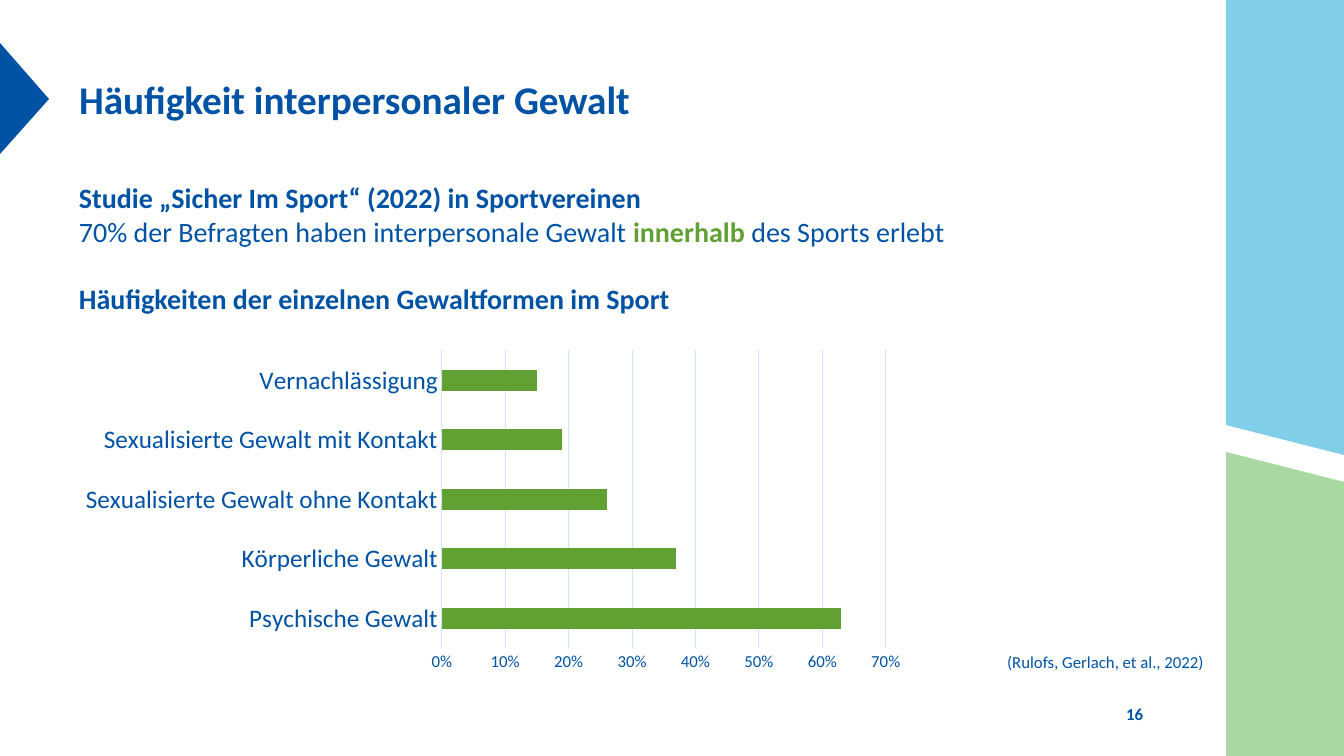
from lxml import etree
from pptx import Presentation
from pptx.chart.data import CategoryChartData
from pptx.dml.color import RGBColor
from pptx.enum.chart import XL_CHART_TYPE, XL_TICK_MARK
from pptx.enum.text import MSO_ANCHOR, PP_ALIGN
from pptx.util import Pt

PX = 9071  # EMU per px, 100.8 px to the inch
FONT = "Calibri"
BLUE = RGBColor(0x00, 0x53, 0xA4)
SKY = RGBColor(0x81, 0xCE, 0xE7)
MINT = RGBColor(0xA9, 0xD8, 0xA2)
GREEN = RGBColor(0x61, 0xA0, 0x32)
GRID = RGBColor(0xCB, 0xE5, 0xFF)

BAR_CLUSTERED = XL_CHART_TYPE.BAR_CLUSTERED
NO_TICK = XL_TICK_MARK.NONE
LEFT, RIGHT = PP_ALIGN.LEFT, PP_ALIGN.RIGHT
TOP, MIDDLE = MSO_ANCHOR.TOP, MSO_ANCHOR.MIDDLE

VIOLENCE_RATES = {
    "Psychische Gewalt": 0.63,
    "Körperliche Gewalt": 0.37,
    "Sexualisierte Gewalt ohne Kontakt": 0.26,
    "Sexualisierte Gewalt mit Kontakt": 0.19,
    "Vernachlässigung": 0.15,
}


def box(*lengths):
    return [n * PX for n in lengths]


def style_font(font, size, color=BLUE, bold=False):
    font.name = FONT
    font.size = Pt(size)
    font.bold = bold
    font.color.rgb = color


def add_polygon(s, points, color):
    builder = s.shapes.build_freeform(*points[0], scale=PX)
    builder.add_line_segments(points[1:], close=True)
    sp = builder.convert_to_shape()
    sp.shadow.inherit = False
    sp.fill.solid()
    sp.fill.fore_color.rgb = color
    sp.line.fill.background()


def fill_text(sp, paragraphs, size, align=LEFT, anchor=TOP):
    """Write paragraphs, each a list of (text, bold, color) runs."""
    tf = sp.text_frame
    tf.word_wrap = True
    tf.vertical_anchor = anchor
    for i, runs in enumerate(paragraphs):
        p = tf.add_paragraph() if i else tf.paragraphs[0]
        p.alignment = align
        for text, bold, color in runs:
            r = p.add_run()
            r.text = text
            style_font(r.font, size, color, bold)
    return tf


def add_title(s, text):
    sp = s.shapes.title
    sp.left, sp.top, sp.width, sp.height = box(69, 43, 1085, 111)
    fill_text(sp, [[(text, True, BLUE)]], 28, anchor=MIDDLE)


def add_text(s, bounds, paragraphs, size, align=LEFT, anchor=TOP):
    sp = s.shapes.add_textbox(*box(*bounds))
    return fill_text(sp, paragraphs, size, align, anchor)


def set_plot_area(chart, **fractions):
    """Fix the inner plot area as fractions of the chart's size."""
    plot_area = chart.plots[0]._element.getparent()
    ns = plot_area.nsmap["c"]
    for old in plot_area.findall(f"{{{ns}}}layout"):
        plot_area.remove(old)
    layout = etree.Element(f"{{{ns}}}layout")
    manual = etree.SubElement(layout, f"{{{ns}}}manualLayout")
    settings = {"layoutTarget": "inner", "xMode": "edge", "yMode": "edge", **fractions}
    for name, value in settings.items():
        etree.SubElement(manual, f"{{{ns}}}{name}", val=str(value))
    plot_area.insert(0, layout)


def add_rate_chart(s, bounds):
    data = CategoryChartData(number_format="0%")
    data.categories = list(VIOLENCE_RATES)
    data.add_series("Series 1", list(VIOLENCE_RATES.values()))
    chart = s.shapes.add_chart(BAR_CLUSTERED, *box(*bounds), data).chart
    chart.has_legend = False
    chart.has_title = False
    style_font(chart.font, 10)

    plot = chart.plots[0]
    plot.gap_width = 182
    plot.vary_by_categories = False
    fill = plot.series[0].format.fill
    fill.solid()
    fill.fore_color.rgb = GREEN

    categories, values = chart.category_axis, chart.value_axis
    for axis, size in ((categories, 18), (values, 12)):
        axis.major_tick_mark = axis.minor_tick_mark = NO_TICK
        style_font(axis.tick_labels.font, size)
    values.minimum_scale, values.maximum_scale, values.major_unit = 0, 0.7, 0.1
    values.tick_labels.number_format = "0%"
    values.tick_labels.number_format_is_linked = False
    values.format.line.fill.background()
    for line in (categories.format.line, values.major_gridlines.format.line):
        line.color.rgb = GRID
        line.width = Pt(0.75)
    set_plot_area(chart, x=0.438, y=0.016, w=0.523, h=0.887)


def main():
    prs = Presentation()
    prs.slide_width, prs.slide_height = box(1344, 756)
    s = prs.slides.add_slide(prs.slide_layouts[5])

    add_polygon(s, [(1226, 452), (1344, 482), (1344, 756), (1226, 756)], MINT)
    add_polygon(s, [(0, 43), (49, 99), (0, 154)], BLUE)
    add_polygon(s, [(1226, 0), (1344, 0), (1344, 455), (1226, 425)], SKY)

    add_title(s, "Häufigkeit interpersonaler Gewalt")
    tf = add_text(s, (69, 176, 1085, 160), [
        [("Studie „Sicher Im Sport“ (2022) in Sportvereinen", True, BLUE)],
        [("70% der Befragten haben interpersonale Gewalt ", False, BLUE),
         ("innerhalb", True, GREEN),
         (" des Sports erlebt", False, BLUE)],
        [("Häufigkeiten der einzelnen Gewaltformen im Sport", True, BLUE)],
    ], 20)
    tf.paragraphs[-1].space_before = Pt(24)

    add_rate_chart(s, (70, 345, 849, 336))
    add_text(s, (1079, 696, 74, 35), [[("16", True, BLUE)]], 12, RIGHT, MIDDLE)
    tf = add_text(s, (1000, 647, 204, 32),
                  [[("(Rulofs, Gerlach, et al., 2022)", False, BLUE)]], 12, RIGHT)
    tf.margin_left = tf.margin_right = 0

    prs.save("out.pptx")


if __name__ == "__main__":
    main()
